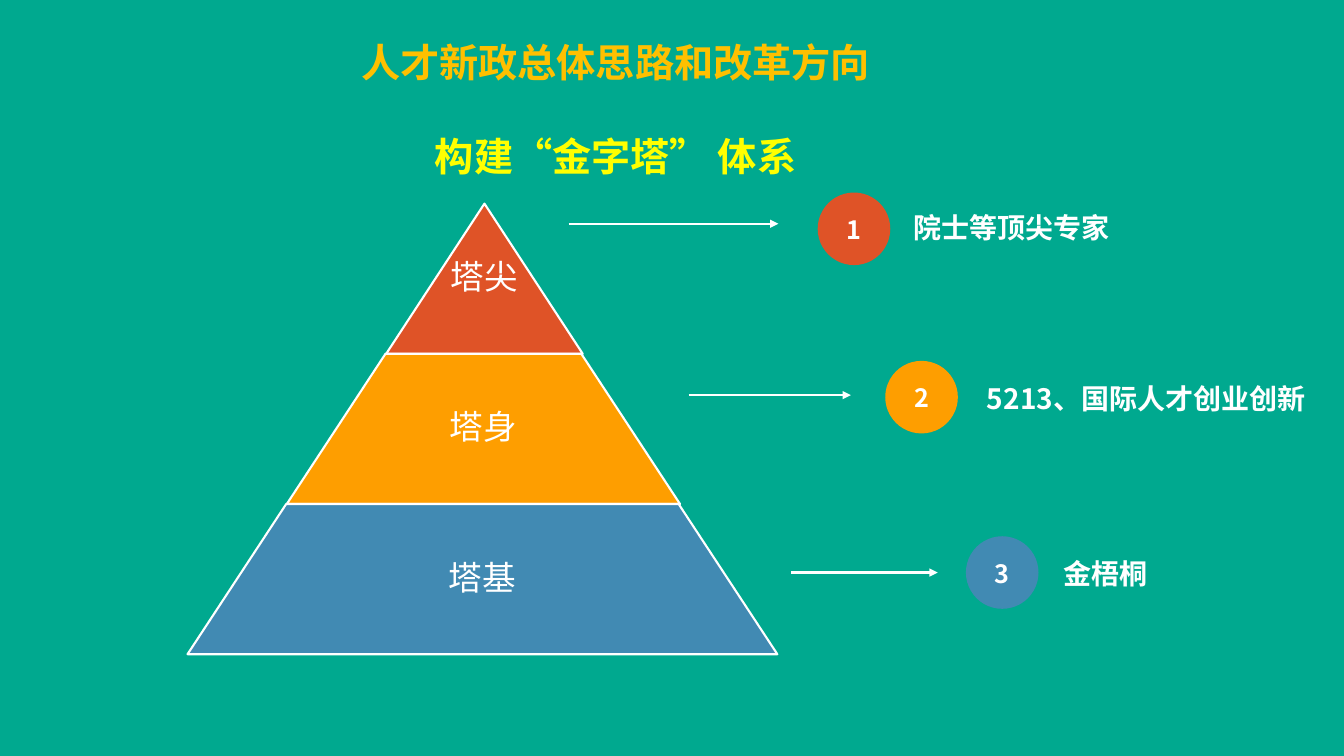
from pptx import Presentation
from pptx import util as u
from pptx.dml.color import RGBColor
from pptx.enum import shapes, text
from pptx.oxml.ns import qn
from lxml import etree

WHITE = "FFFFFF"
TIER_HEIGHT = 1.49
TIER_WIDTH = 1.95
CIRCLE_SIZE = 0.72


def color(value):
    return RGBColor.from_string(value)


class PyramidPage:
    font = "Noto Sans CJK SC"
    line_width = u.Pt(1.5)
    line_ratio = 1.25

    def __init__(self, deck, background):
        self.page = deck.slides.add_slide(deck.slide_layouts[6])
        fill = self.page.background.fill
        fill.solid()
        fill.fore_color.rgb = color(background)

    def add_span(self, para, words, size, ink=WHITE, bold=True, align=None):
        para.alignment = align
        para.line_spacing = u.Pt(size * self.line_ratio)
        span = para.add_run()
        span.text = words
        span.font.size = u.Pt(size)
        span.font.bold = bold
        span.font.name = self.font
        span.font.color.rgb = color(ink)
        east_asian = etree.SubElement(span.font._element, qn("a:ea"))
        east_asian.set("typeface", self.font)

    def text_box(self, left, top, width, height):
        box = self.page.shapes.add_textbox(*map(u.Inches, (left, top, width, height)))
        box.text_frame.word_wrap = True
        return box.text_frame

    def shape(self, kind, left, top, width, height, fill):
        shape = self.page.shapes.add_shape(kind, *map(u.Inches, (left, top, width, height)))
        shape.shadow.inherit = False
        shape.fill.solid()
        shape.fill.fore_color.rgb = color(fill)
        shape.line.fill.background()
        return shape

    def heading(self, left, top, width, height, lines, gap):
        frame = self.text_box(left, top, width, height)
        for index, (words, ink) in enumerate(lines):
            para = frame.add_paragraph() if index else frame.paragraphs[0]
            self.add_span(para, words, 28, ink, align=text.PP_ALIGN.CENTER)
            if index:
                para.space_before = u.Pt(gap)

    def tier(self, left, top, width, height, fill, words):
        tier = self.shape(shapes.MSO_SHAPE.TRAPEZOID, left, top, width, height, fill)
        tier.adjustments[0] = 0.657
        tier.line.color.rgb = color(WHITE)
        tier.line.width = self.line_width
        label_width = max(TIER_WIDTH, width * 0.65)
        frame = self.text_box(left + (width - label_width) / 2, top, label_width, height)
        frame.vertical_anchor = text.MSO_ANCHOR.MIDDLE
        frame.margin_left = frame.margin_right = u.Inches(0.03)
        frame.margin_top = frame.margin_bottom = u.Inches(0.03)
        para = frame.paragraphs[0]
        self.add_span(para, words, 24, bold=False, align=text.PP_ALIGN.CENTER)
        para.line_spacing = 0.9

    def badge(self, left, top, fill, number):
        circle = self.shape(shapes.MSO_SHAPE.OVAL, left, top, CIRCLE_SIZE, CIRCLE_SIZE, fill)
        frame = circle.text_frame
        frame.vertical_anchor = text.MSO_ANCHOR.MIDDLE
        self.add_span(frame.paragraphs[0], number, 18, align=text.PP_ALIGN.CENTER)

    def arrow(self, start, end, level):
        arrow = self.page.shapes.add_connector(
            shapes.MSO_CONNECTOR.STRAIGHT, *map(u.Inches, (start, level, end, level)))
        arrow.line.color.rgb = color(WHITE)
        arrow.line.width = self.line_width
        etree.SubElement(arrow.line._get_or_add_ln(), qn("a:tailEnd")).set("type", "triangle")
        etree.SubElement(arrow._element.spPr, qn("a:effectLst"))

    def label(self, left, top, words):
        frame = self.text_box(left, top, 4.09, 0.44)
        self.add_span(frame.paragraphs[0], words, 20)


def main():
    deck = Presentation()
    deck.slide_width = u.Inches(13.33)
    deck.slide_height = u.Inches(7.5)
    page = PyramidPage(deck, "00A98F")

    page.heading(2.99, 0.31, 6.23, 1.51, [
        ("人才新政总体思路和改革方向", "FFC000"),
        ("构建“金字塔” 体系", "FFFF00"),
    ], gap=32)

    levels = [
        ("塔尖", "DF5327", (8.11, 1.91), (5.64, 7.72, 2.22), (8.96, 2.03), "院士等顶尖专家"),
        ("塔身", "FE9E00", (8.78, 3.58), (6.83, 8.44, 3.92), (9.69, 3.72), "5213、国际人才创业创新"),
        ("塔基", "418AB3", (9.58, 5.32), (7.85, 9.3, 5.68), (10.45, 5.46), "金梧桐"),
    ]
    for index, (name, fill, circle, arrow, label, words) in enumerate(levels):
        page.tier(3.83 - 0.985 * index, 2.02 + TIER_HEIGHT * index,
                  TIER_WIDTH * (index + 1), TIER_HEIGHT, fill, name)
        page.badge(*circle, fill, str(index + 1))
        page.arrow(*arrow)
        page.label(*label, words)

    deck.save("out.pptx")


if __name__ == "__main__":
    main()
